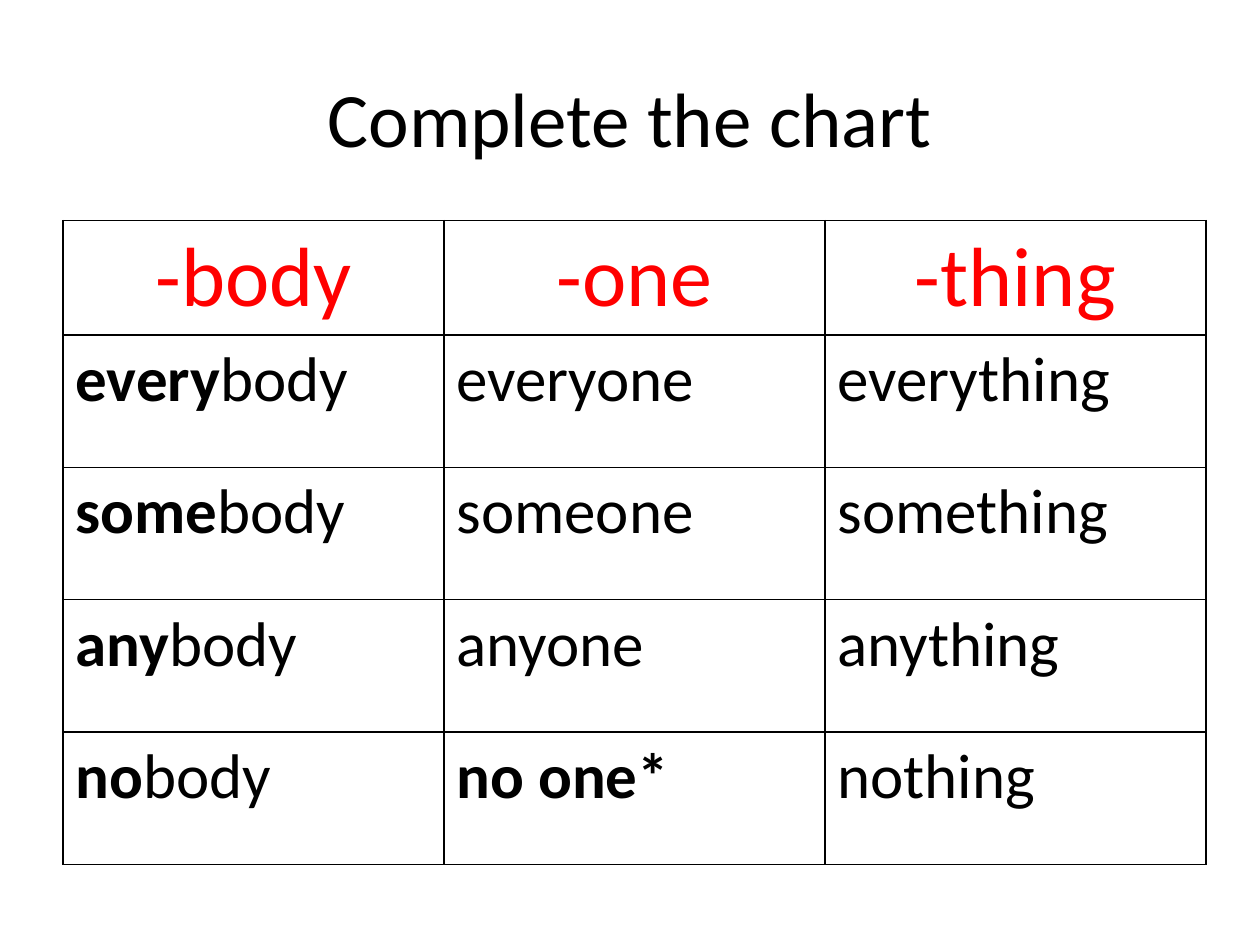
from dataclasses import dataclass

from lxml.etree import SubElement
from pptx import Presentation
from pptx.dml.color import RGBColor
from pptx.enum.text import MSO_ANCHOR, PP_ALIGN
from pptx.oxml.ns import qn
from pptx.util import Inches, Pt


@dataclass(frozen=True)
class Theme:
    font: str = "Calibri"
    ink: str = "000000"
    accent: str = "FF0000"
    paper: str = "FFFFFF"
    title: int = 44
    header: int = 48
    body: int = 36
    border: int = 1


THEME = Theme()
WIDTH, HEIGHT = 10, 7.5
HEADER_ROW, BODY_ROW = 0.91, 1.05

HEADINGS = ["-body", "-one", "-thing"]
# Each cell is a bold part followed by a regular part
WORDS = [
    [("every", "body"), ("", "everyone"), ("", "everything")],
    [("some", "body"), ("", "someone"), ("", "something")],
    [("any", "body"), ("", "anyone"), ("", "anything")],
    [("no", "body"), ("no one*", ""), ("", "nothing")],
]


def add_run(p, text, size, color, bold=False):
    r = p.add_run()
    r.text = text
    formats = {"name": THEME.font, "size": Pt(size), "bold": bold}
    for name, value in formats.items():
        setattr(r.font, name, value)
    r.font.color.rgb = RGBColor.from_string(color)


def style_cell(cell):
    """Draw all four borders, then fill the cell."""
    tc_pr = cell._tc.get_or_add_tcPr()
    for side in ("lnL", "lnR", "lnT", "lnB"):
        ln = SubElement(tc_pr, qn(f"a:{side}"), w=str(Pt(THEME.border)))
        fill = SubElement(ln, qn("a:solidFill"))
        SubElement(fill, qn("a:srgbClr"), val=THEME.ink)
    cell.fill.solid()
    cell.fill.fore_color.rgb = RGBColor.from_string(THEME.paper)


def add_title(s, box, text):
    sp = s.shapes.add_textbox(*map(Inches, box))
    tf = sp.text_frame
    for name, value in {"word_wrap": True, "vertical_anchor": MSO_ANCHOR.MIDDLE}.items():
        setattr(tf, name, value)
    p = tf.paragraphs[0]
    p.alignment = PP_ALIGN.CENTER
    add_run(p, text, THEME.title, THEME.ink)


def add_word_table(s, box):
    frame = s.shapes.add_table(len(WORDS) + 1, len(HEADINGS), *map(Inches, box))
    table = frame.table
    for name in ("first_row", "horz_banding"):
        setattr(table, name, False)
    for col in table.columns:
        col.width = Inches(box[2] / len(HEADINGS))
    for i, row in enumerate(table.rows):
        row.height = Inches(BODY_ROW if i else HEADER_ROW)

    # Header row
    for cell, heading in zip(table.rows[0].cells, HEADINGS):
        p = cell.text_frame.paragraphs[0]
        p.alignment = PP_ALIGN.CENTER
        add_run(p, heading, THEME.header, THEME.accent)

    # Word rows
    for i, words in enumerate(WORDS, start=1):
        for cell, parts in zip(table.rows[i].cells, words):
            p = cell.text_frame.paragraphs[0]
            for text, bold in zip(parts, (True, False)):
                if text:
                    add_run(p, text, THEME.body, THEME.ink, bold)

    for cell in table.iter_cells():
        style_cell(cell)


def main():
    prs = Presentation()
    prs.slide_width, prs.slide_height = Inches(WIDTH), Inches(HEIGHT)
    s = prs.slides.add_slide(prs.slide_layouts[6])
    margin = WIDTH * 0.05
    add_title(s, (margin, HEIGHT * 0.04, WIDTH - 2 * margin, 1.25), "Complete the chart")
    table_height = HEADER_ROW + BODY_ROW * len(WORDS)
    add_word_table(s, (margin, 1.75, 9.07, table_height))
    prs.save("out.pptx")


if __name__ == "__main__":
    main()
